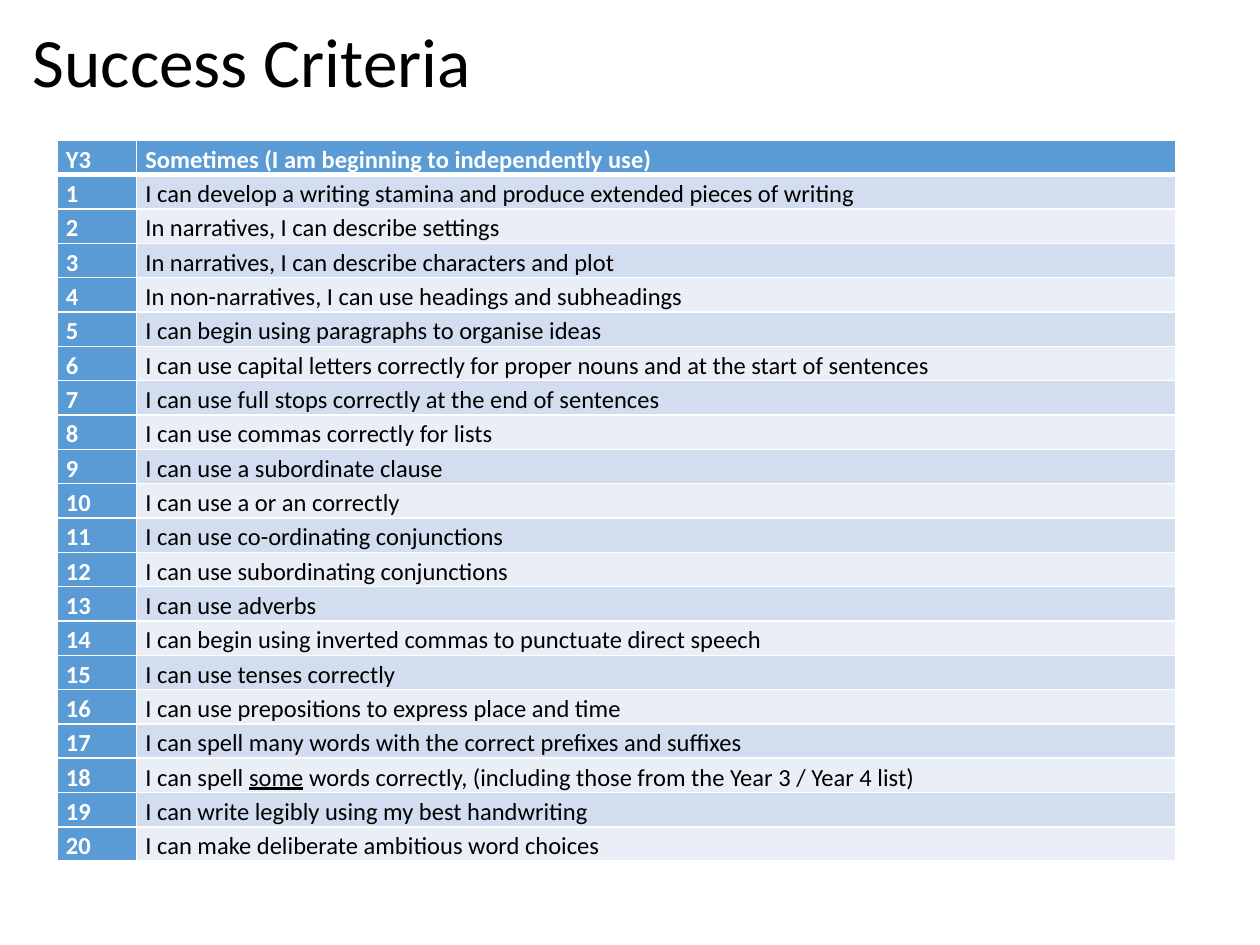
import pptx
import pptx.util
import pptx.dml.color
import pptx.enum.text
import pptx.oxml.ns
import lxml.etree

Pt = pptx.util.Pt
RGBColor = pptx.dml.color.RGBColor
ANCHOR = pptx.enum.text.MSO_ANCHOR

BLACK = RGBColor(0x00, 0x00, 0x00)
WHITE = RGBColor(0xFF, 0xFF, 0xFF)
BLUE = RGBColor(0x5B, 0x9B, 0xD5)
BANDS = (RGBColor(0xD2, 0xDE, 0xEF), RGBColor(0xEA, 0xEF, 0xF7))

HEADER = ("Y3", "Sometimes (I am beginning to independently use)")
CRITERIA = [
    "I can develop a writing stamina and produce extended pieces of writing",
    "In narratives, I can describe settings",
    "In narratives, I can describe characters and plot",
    "In non-narratives, I can use headings and subheadings",
    "I can begin using paragraphs to organise ideas",
    "I can use capital letters correctly for proper nouns and at the start of sentences",
    "I can use full stops correctly at the end of sentences",
    "I can use commas correctly for lists",
    "I can use a subordinate clause",
    "I can use a or an correctly",
    "I can use co-ordinating conjunctions",
    "I can use subordinating conjunctions",
    "I can use adverbs",
    "I can begin using inverted commas to punctuate direct speech",
    "I can use tenses correctly",
    "I can use prepositions to express place and time",
    "I can spell many words with the correct prefixes and suffixes",
    "I can spell _some_ words correctly, (including those from the Year 3 / Year 4 list)",
    "I can write legibly using my best handwriting",
    "I can make deliberate ambitious word choices",
]


class Deck:
    """Holds the style and the current slide, and adds elements in points."""

    font = "Calibri"
    cell_format = {"margin_left": Pt(5), "margin_right": Pt(5),
                   "margin_top": 0, "margin_bottom": 0}

    def __init__(self, width, height):
        self.prs = pptx.Presentation()
        self.prs.slide_width, self.prs.slide_height = Pt(width), Pt(height)
        self.s = self.prs.slides.add_slide(self.prs.slide_layouts[5])

    def apply(self, obj, **values):
        for name, value in values.items():
            setattr(obj, name, value)

    def text(self, tf, text, size, color, spacing, bold=False):
        p = tf.paragraphs[0]
        self.apply(p, line_spacing=spacing, alignment=pptx.enum.text.PP_ALIGN.LEFT)
        for i, part in enumerate(text.split("_")):
            r = p.add_run()
            r.text = part
            self.apply(r.font, name=self.font, size=Pt(size), bold=bold,
                       underline=True if i % 2 else None)
            r.font.color.rgb = color

    def title(self, text, left, top, width, height, size):
        sp = self.s.shapes.title
        self.apply(sp, left=Pt(left), top=Pt(top), width=Pt(width), height=Pt(height))
        self.apply(sp.text_frame, vertical_anchor=ANCHOR.MIDDLE, word_wrap=True)
        self.text(sp.text_frame, text, size, BLACK, 0.9)

    def border(self, cell, **widths):
        tc_pr = cell._tc.get_or_add_tcPr()
        qn = pptx.oxml.ns.qn
        for side, width in widths.items():
            ln = lxml.etree.SubElement(tc_pr, qn("a:" + side), w=str(Pt(width)))
            fill = lxml.etree.SubElement(ln, qn("a:solidFill"))
            lxml.etree.SubElement(fill, qn("a:srgbClr"), val=str(WHITE))

    def cell(self, cell, text, row, is_key):
        self.apply(cell, **self.cell_format,
                   vertical_anchor=ANCHOR.TOP if is_key else ANCHOR.MIDDLE)
        self.border(cell, lnL=1, lnR=1, lnT=3 if row == 1 else 1, lnB=3 if row == 0 else 1)
        cell.fill.solid()
        cell.fill.fore_color.rgb = BLUE if is_key else BANDS[(row - 1) % 2]
        self.text(cell.text_frame, text, 14, WHITE if is_key else BLACK, 1.15, is_key)

    def table(self, rows, left, top, widths, row_height):
        sp = self.s.shapes.add_table(len(rows), len(widths), Pt(left), Pt(top),
                                     Pt(sum(widths)), Pt(row_height * len(rows)))
        for column, width in zip(sp.table.columns, widths):
            column.width = Pt(width)
        for i, texts in enumerate(rows):
            sp.table.rows[i].height = Pt(row_height)
            for j, text in enumerate(texts):
                self.cell(sp.table.cell(i, j), text, i, i == 0 or j == 0)


def main():
    deck = Deck(720, 540)
    deck.title("Success Criteria", 11.5, 13.7, 620.6, 46.8, 39.6)
    rows = [HEADER] + [(str(n), text) for n, text in enumerate(CRITERIA, 1)]
    deck.table(rows, 32.7, 80.2, (45.4, 594), 19.3)
    deck.prs.save("out.pptx")


if __name__ == "__main__":
    main()
